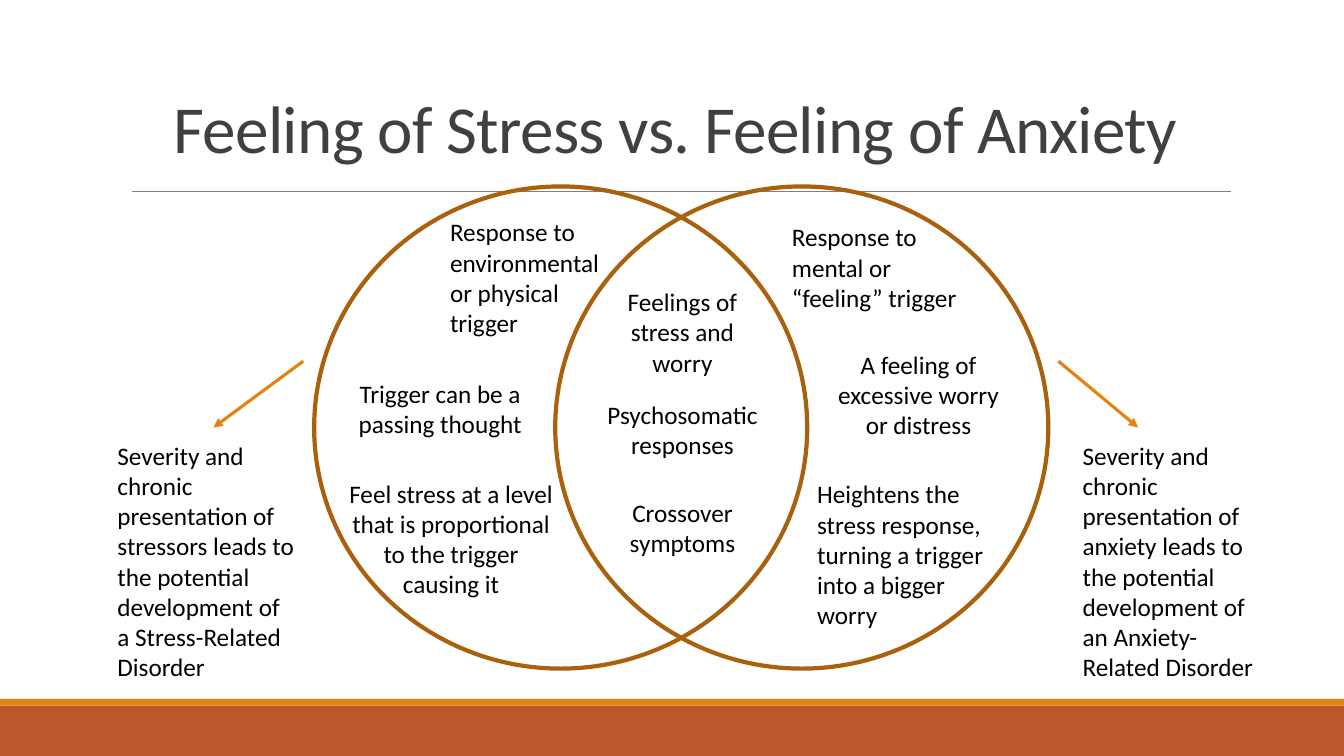
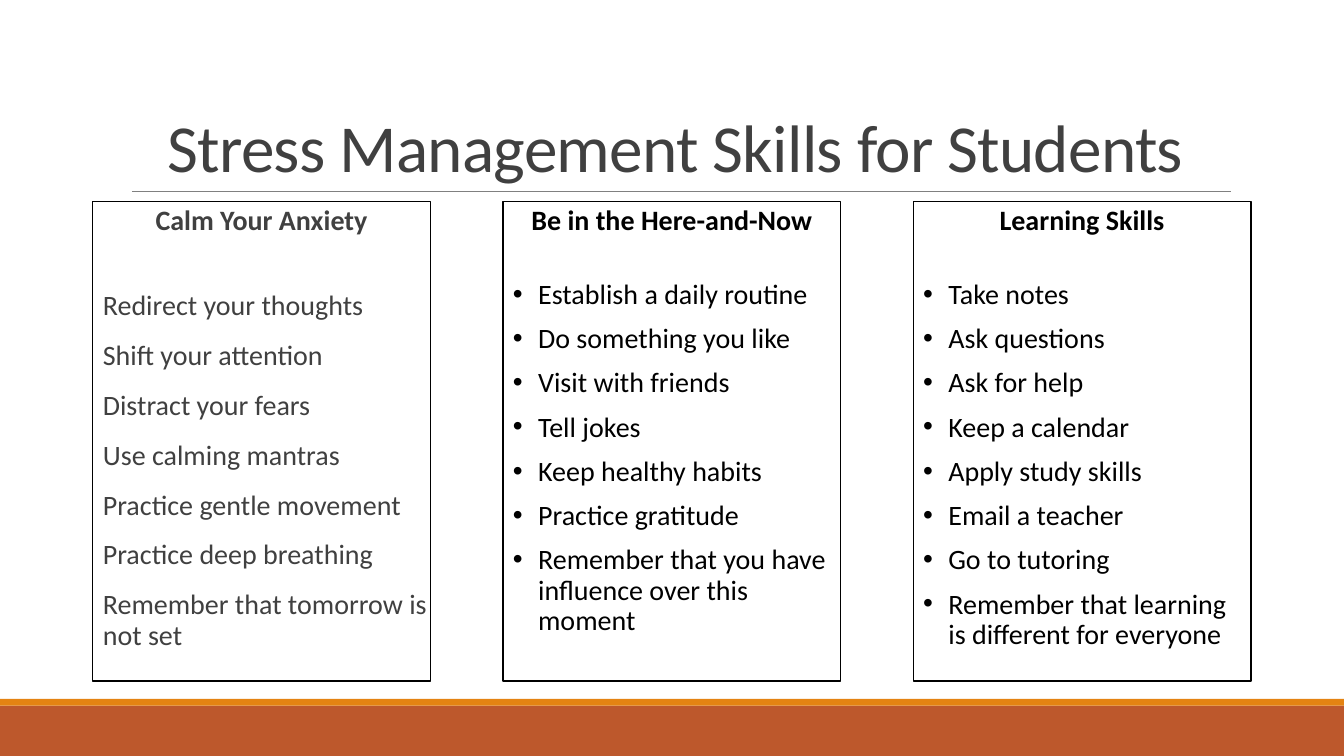
import pptx
import pptx.dml.color
import pptx.enum.shapes
import pptx.enum.text
import pptx.oxml.ns
import pptx.util
from lxml import etree

COLUMNS, ROWS = 160, 90
CELL = pptx.util.Inches(1) // 12
SHAPES = pptx.enum.shapes.MSO_SHAPE
ALIGN = pptx.enum.text.PP_ALIGN
ANCHOR = pptx.enum.text.MSO_ANCHOR


def grid(*cells):
    return [pptx.util.Emu(round(cell * CELL)) for cell in cells]


def paint(target, color):
    target.solid()
    target.fore_color.rgb = pptx.dml.color.RGBColor.from_string(color)


def add_tag(parent, name, **attributes):
    return etree.SubElement(parent, pptx.oxml.ns.qn(name), **attributes)


def write(frame, text, size=18, color="000000", bold=False, align=ALIGN.LEFT,
          leading=1.0, before=0, after=0, tracking=0, indent=0, bullet=None):
    for line in text.split("\n"):
        para = frame.paragraphs[-1]
        if para.runs:
            para = frame.add_paragraph()
        para.alignment = align
        para.line_spacing = leading
        para.space_before = pptx.util.Pt(before)
        para.space_after = pptx.util.Pt(after)
        margin = grid(indent)[0]
        settings = para._p.get_or_add_pPr()
        settings.set("marL", str(margin))
        settings.set("indent", str(-margin if bullet else 0))
        if bullet:
            add_tag(settings, "a:buFont", typeface="Arial")
            add_tag(settings, "a:buChar", char=bullet)
        else:
            add_tag(settings, "a:buNone")
        span = para.add_run()
        span.text = line
        span.font.name = "Calibri"
        span.font.size = pptx.util.Pt(size)
        span.font.bold = bold
        paint(span.font.fill, color)
        if tracking:
            span._r.get_or_add_rPr().set("spc", str(round(tracking * 100)))


class Pages:
    band, accent, outline = "BD582C", "E48312", "A9610D"
    rule, ink, black = "808080", "404040", "000000"

    def __init__(self):
        self.deck = pptx.Presentation()
        self.deck.slide_width, self.deck.slide_height = grid(COLUMNS, ROWS)
        self.page = None

    def start(self, layout, title, title_bottom):
        self.page = self.deck.slides.add_slide(self.deck.slide_layouts[layout])
        self.bar(84, 6, self.band)
        self.bar(83.2, 0.8, self.accent)
        self.line((15.7, 22.8), (146.5, 22.8), self.rule, 0.5)
        box = self.page.shapes.title
        self.place(box, 14.4, 3.7, 132, title_bottom - 3.7)
        frame = self.prepare(box, ANCHOR.BOTTOM)
        write(frame, title, size=48, color=self.ink, align=ALIGN.CENTER,
              leading=0.85, tracking=-0.5)

    def place(self, box, *cells):
        box.left, box.top, box.width, box.height = grid(*cells)

    def prepare(self, box, anchor=ANCHOR.TOP):
        frame = box.text_frame
        frame.word_wrap = True
        frame.auto_size = pptx.enum.text.MSO_AUTO_SIZE.NONE
        frame.vertical_anchor = anchor
        return frame

    def bar(self, top, height, color):
        box = self.page.shapes.add_shape(
            SHAPES.RECTANGLE, *grid(0, top, COLUMNS, height))
        box.shadow.inherit = False
        paint(box.fill, color)
        box.line.fill.background()

    def line(self, begin, end, color, weight, arrow=False):
        line = self.page.shapes.add_connector(
            pptx.enum.shapes.MSO_CONNECTOR.STRAIGHT, *grid(*begin, *end))
        self.stroke(line, color, weight)
        if arrow:
            add_tag(line.line._get_or_add_ln(), "a:tailEnd", type="triangle")
        add_tag(line._element.spPr, "a:effectLst")

    def stroke(self, box, color, weight):
        box.line.width = pptx.util.Pt(weight)
        paint(box.line.fill, color)

    def circle(self, left):
        box = self.page.shapes.add_shape(
            SHAPES.FLOWCHART_CONNECTOR, *grid(left, 22.2, 58.7, 57.4))
        box.shadow.inherit = False
        box.fill.background()
        self.stroke(box, self.outline, 3)

    def note(self, left, top, width, lines, text, align=ALIGN.LEFT):
        box = self.page.shapes.add_textbox(
            *grid(left, top, width, 1.2 + 3.65 * lines))
        write(self.prepare(box), text, align=align)

    def panel(self, box, left, heading, items, color, before, after=0,
              indent=3, bullet="•", side=1.2):
        self.place(box, left, 24, 40.2, 57.1)
        box.fill.background()
        self.stroke(box, self.black, 1)
        frame = self.prepare(box)
        frame.margin_left, frame.margin_right = grid(side, side)
        style = dict(size=20, color=color, leading=0.9, after=after)
        write(frame, heading, bold=True, align=ALIGN.CENTER, before=before, **style)
        gap = 2 * before + after + 11
        for item in items:
            write(frame, item, before=gap, indent=indent, bullet=bullet, **style)
            gap = before


def compare_feelings(pages):
    pages.start(5, "Feeling of Stress vs. Feeling of Anxiety", 20.5)
    for left in (37.4, 66.1):
        pages.circle(left)
    middle = ALIGN.CENTER
    pages.note(52.4, 25.2, 21.1, 4, "Response to environmental or physical trigger")
    pages.note(93.1, 25.8, 23.5, 3, "Response to mental or “feeling” trigger")
    pages.note(96.1, 56.4, 25.6, 5,
               "Heightens the stress response, turning a trigger into a bigger\nworry")
    pages.note(38.4, 44.4, 28, 2, "Trigger can be a passing thought", middle)
    pages.note(97.6, 41, 23.5, 3, "A feeling of excessive worry or distress", middle)
    pages.note(39.7, 56.3, 28, 4,
               "Feel stress at a level that is proportional to the trigger causing it",
               middle)
    for top, lines, text in (
            (33.5, 3, "Feelings of stress and worry"),
            (46.9, 2, "Psychosomatic\nresponses"),
            (58.6, 2, "Crossover\nsymptoms")):
        pages.note(70.7, top, 21.1, lines, text, middle)
    for left, cause, disorder, begin, end in (
            (12.8, "stressors", "a Stress-Related", 36.1, 25.4),
            (127.7, "anxiety", "an Anxiety-Related", 126, 135.5)):
        pages.note(left, 51.8, 23.4, 8,
                   f"Severity and chronic presentation of {cause} leads to "
                   f"the potential development of {disorder} Disorder")
        pages.line((begin, 43), (end, 50.9), pages.accent, 2.25, arrow=True)


def list_skills(pages):
    pages.start(1, "Stress Management Skills for Students", 22.8)
    first, pitch = 11.04, 48.84
    pages.panel(pages.page.placeholders[1], first, "Calm Your Anxiety", (
        "Redirect your thoughts", "Shift your attention", "Distract your fears",
        "Use calming mantras", "Practice gentle movement",
        "Practice deep breathing", "Remember that tomorrow is not set",
    ), pages.ink, before=12, after=2, indent=1.2, bullet=None, side=0)
    columns = (
        ("Be in the Here-and-Now", (
            "Establish a daily routine", "Do something you like",
            "Visit with friends", "Tell jokes", "Keep healthy habits",
            "Practice gratitude",
            "Remember that you have influence over this moment")),
        ("Learning Skills", (
            "Take notes", "Ask questions", "Ask for help", "Keep a calendar",
            "Apply study skills", "Email a teacher", "Go to tutoring",
            "Remember that learning is different for everyone")))
    for index, (heading, items) in enumerate(columns, 1):
        box = pages.page.shapes.add_textbox(*grid(0, 0, 1, 1))
        pages.panel(box, first + index * pitch, heading, items, pages.black, before=10)


def main():
    pages = Pages()
    compare_feelings(pages)
    list_skills(pages)
    pages.deck.save("out.pptx")


if __name__ == "__main__":
    main()
